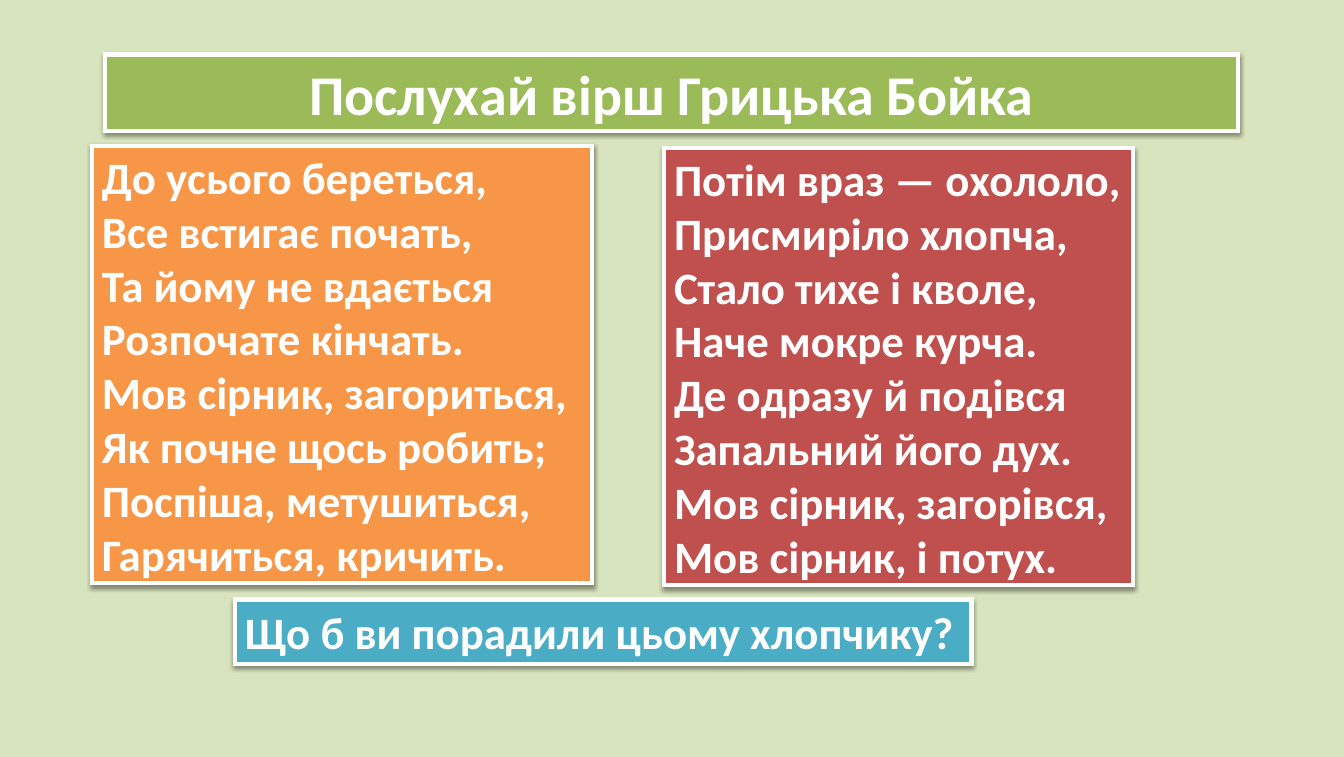
"""Build a slide with a poem in two panels, a title and a question."""
from dataclasses import dataclass

from lxml.etree import SubElement as Sub
from pptx import Presentation as Deck
from pptx.dml.color import RGBColor as RGB
from pptx.enum.shapes import MSO_SHAPE as Kind
from pptx.enum.text import MSO_ANCHOR as Anchor, MSO_AUTO_SIZE as Fit, PP_ALIGN as Align
from pptx.oxml import parse_xml as to_xml
from pptx.oxml.ns import nsdecls, qn
from pptx.shapes.autoshape import Shape
from pptx.util import Inches, Pt

WIDE, HIGH = Inches(13.32), Inches(7.5)
PALE = RGB(0xD7, 0xE4, 0xBD)
GREEN = RGB(0x9B, 0xBB, 0x59)
ORANGE = RGB(0xF7, 0x96, 0x46)
RED = RGB(0xC0, 0x50, 0x4D)
TEAL = RGB(0x4B, 0xAC, 0xC6)
WHITE = RGB(0xFF, 0xFF, 0xFF)

SHADE = f"""<a:effectLst {nsdecls('a')}>
  <a:outerShdw blurRad="40000" dist="20000" dir="5400000" rotWithShape="0">
    <a:srgbClr val="000000"><a:alpha val="38000"/></a:srgbClr>
  </a:outerShdw></a:effectLst>"""
ROUND = f'<a:prstGeom {nsdecls("a")} prst="roundRect"><a:avLst/></a:prstGeom>'


@dataclass(frozen=True)
class Panel:
    """A filled text panel, placed in percent of the slide's size."""

    left: float
    top: float
    width: float
    height: float
    fill: RGB
    lines: tuple[str, ...]
    size: int = 32
    align: Align = Align.LEFT
    anchor: Anchor = Anchor.MIDDLE
    wrap: bool = True


TITLE = Panel(7.81, 7.2, 84.31, 10.13, GREEN,
              ("Послухай вірш Грицька Бойка",), 40, Align.CENTER)
FIRST = Panel(6.83, 19.33, 37.24, 57.73, ORANGE, (
    "До усього береться,",
    "Все встигає почать,",
    "Та йому не вдається",
    "Розпочате кінчать.",
    "Мов сірник, загориться,",
    "Як почне щось робить;",
    "Поспіша, метушиться, Гарячиться, кричить.",
))
NEXT = Panel(49.4, 19.6, 34.91, 57.73, RED, (
    "Потім враз — охололо, Присмиріло хлопча,",
    "Стало тихе і кволе,",
    "Наче мокре курча.",
    "Де одразу й подівся",
    "Запальний його дух.",
    "Мов сірник, загорівся,",
    "Мов сірник, і потух.",
))
ASK = Panel(17.49, 79.2, 54.8, 8.53, TEAL,
            ("Що б ви порадили цьому хлопчику?",),
            anchor=Anchor.TOP, wrap=False)


def place(shape: Shape, panel: Panel) -> None:
    """Move a shape to its panel's place."""
    shape.left, shape.width = (int(WIDE * x / 100) for x in (panel.left, panel.width))
    shape.top, shape.height = (int(HIGH * y / 100) for y in (panel.top, panel.height))


def paint(shape: Shape, panel: Panel) -> None:
    """Give a shape its fill, white edge and soft shadow."""
    shape.fill.solid()
    shape.fill.fore_color.rgb = panel.fill
    shape.line.color.rgb = WHITE
    shape.line.width = Pt(3)
    props = shape.element.spPr
    Sub(props.find(qn("a:ln")), qn("a:miter"), lim="800000")
    props.append(to_xml(SHADE))


def write(shape: Shape, panel: Panel) -> None:
    """Write the lines of a panel, one paragraph each."""
    frame = shape.text_frame
    frame.auto_size = Fit.NONE
    frame.word_wrap = panel.wrap
    frame.vertical_anchor = panel.anchor
    for i, line in enumerate(panel.lines):
        para = frame.add_paragraph() if i else frame.paragraphs[0]
        props = para._p.get_or_add_pPr()
        props.set("marL", "0")
        props.set("indent", "0")
        Sub(props, qn("a:buNone"))
        para.alignment = panel.align
        para.space_before = Pt(0)
        run = para.add_run()
        run.text = line
        font = run.font
        font.name, font.size, font.bold = "Calibri", Pt(panel.size), True
        font.color.rgb = WHITE


def main() -> None:
    """Build and save the deck."""
    deck = Deck()
    deck.slide_width, deck.slide_height = WIDE, HIGH
    slide = deck.slides.add_slide(deck.slide_layouts[3])
    back = slide.background.fill
    back.solid()
    back.fore_color.rgb = PALE
    title, first, second = slide.placeholders
    ask = slide.shapes.add_shape(Kind.RECTANGLE, 0, 0, 0, 0)
    pairs = ((title, TITLE), (first, FIRST), (second, NEXT), (ask, ASK))
    for shape, panel in pairs:
        place(shape, panel)
    title.element.spPr.append(to_xml(ROUND))
    for shape, panel in pairs:
        paint(shape, panel)
        write(shape, panel)
    deck.save("out.pptx")


if __name__ == "__main__":
    main()
